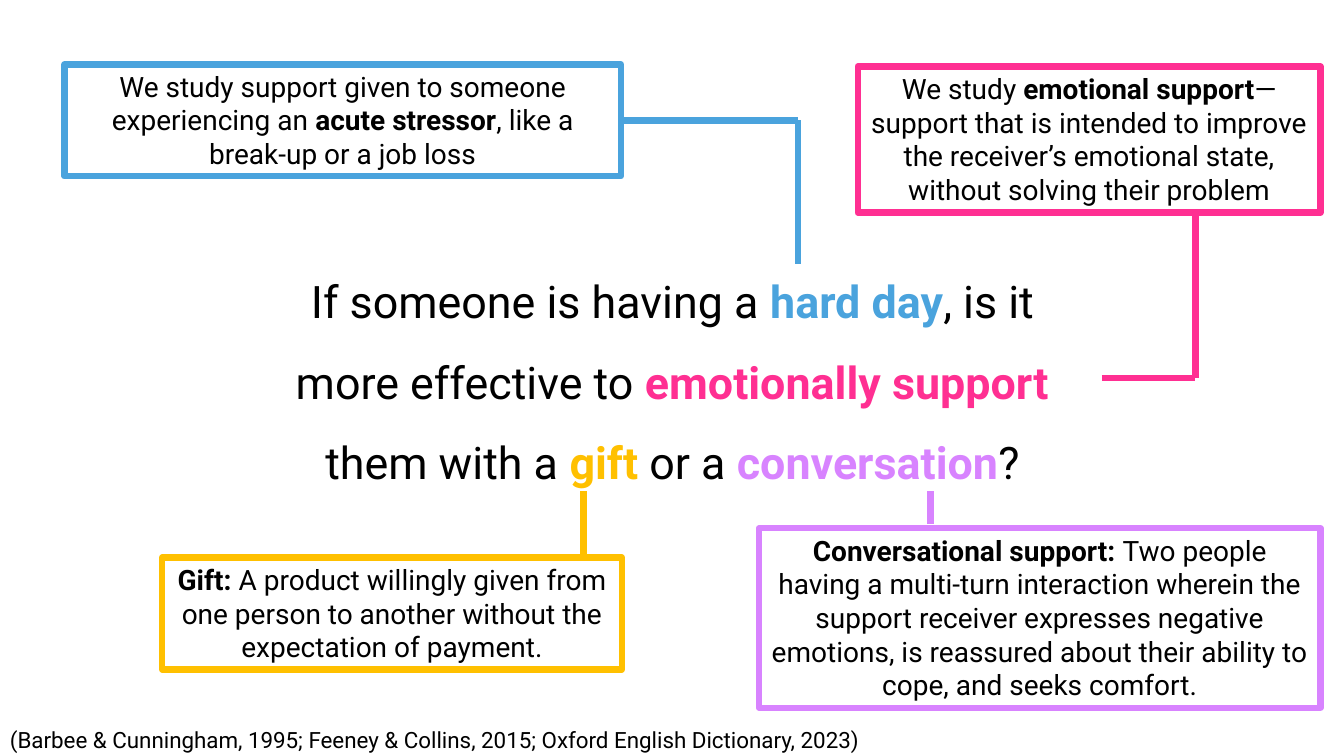
from dataclasses import dataclass

from lxml.etree import SubElement
from pptx import Presentation
from pptx.dml.color import RGBColor
from pptx.enum.shapes import MSO_CONNECTOR, MSO_SHAPE
from pptx.enum.text import MSO_ANCHOR, MSO_AUTO_SIZE, PP_ALIGN
from pptx.oxml.ns import qn
from pptx.util import Pt


@dataclass(frozen=True)
class Theme:
    font: str = "Roboto"
    black: RGBColor = RGBColor(0x00, 0x00, 0x00)
    blue: RGBColor = RGBColor(0x4A, 0xA3, 0xDD)
    pink: RGBColor = RGBColor(0xFF, 0x2F, 0x92)
    gold: RGBColor = RGBColor(0xFF, 0xC0, 0x00)
    purple: RGBColor = RGBColor(0xD8, 0x83, 0xFF)
    question_size: int = 32
    callout_size: int = 20
    citation_size: int = 16
    stroke: float = 4.5


THEME = Theme()


def write(tf, runs, size, align=PP_ALIGN.CENTER):
    """Fill a text frame from (text, accent) pairs; an accent colour makes a run bold."""
    tf.word_wrap = True
    p = tf.paragraphs[0]
    p.alignment = align
    p.font.name = THEME.font
    p.font.size = Pt(size)
    for text, accent in runs:
        r = p.add_run()
        r.text = text
        r.font.name = THEME.font
        r.font.size = Pt(size)
        r.font.bold = accent is not None
        r.font.color.rgb = accent or THEME.black
    return p


def add_text(slide, box, runs, size, align):
    tf = slide.shapes.add_textbox(*map(Pt, box)).text_frame
    return write(tf, runs, size, align)


def add_callout(slide, box, color, runs):
    sp = slide.shapes.add_shape(MSO_SHAPE.RECTANGLE, *map(Pt, box))
    sp.shadow.inherit = False
    sp.fill.background()
    sp.line.color.rgb = color
    sp.line.width = Pt(THEME.stroke)
    tf = sp.text_frame
    write(tf, runs, THEME.callout_size)
    tf.vertical_anchor = MSO_ANCHOR.TOP
    tf.auto_size = MSO_AUTO_SIZE.SHAPE_TO_FIT_TEXT
    return sp


def add_line(slide, start, end, color):
    line = slide.shapes.add_connector(MSO_CONNECTOR.STRAIGHT, *map(Pt, start + end))
    line.line.color.rgb = color
    line.line.width = Pt(THEME.stroke)
    SubElement(line._element.spPr, qn("a:effectLst"))
    return line


def main():
    prs = Presentation()
    prs.slide_width, prs.slide_height = Pt(960), Pt(540)
    slide = prs.slides.add_slide(prs.slide_layouts[6])
    t = THEME

    add_text(slide, (0, 514.8, 648.7, 26.6), [
        ("(Barbee & Cunningham, 1995; Feeney & Collins, 2015; "
         "Oxford English Dictionary, 2023)", None),
    ], t.citation_size, PP_ALIGN.LEFT)
    question = add_text(slide, (185.8, 172.8, 589, 193.7), [
        ("If someone is having a ", None), ("hard day", t.blue),
        (", is it more effective to ", None), ("emotionally support", t.pink),
        (" them with a ", None), ("gift", t.gold),
        (" or a ", None), ("conversation", t.purple), ("?", None),
    ], t.question_size, PP_ALIGN.CENTER)
    question.line_spacing = 1.5

    stressor = add_callout(slide, (46, 46, 397.5, 80), t.blue, [
        ("We study support given to someone experiencing an ", None),
        ("acute stressor", t.black),
        (", like a break-up or a job loss", None),
    ])
    add_callout(slide, (612.7, 47.5, 330.5, 104.4), t.pink, [
        ("We study ", None), ("emotional support", t.black),
        ("—support that is intended to improve the receiver’s emotional state, "
         "without solving their problem", None),
    ])
    add_callout(slide, (115.9, 398.2, 328.3, 80), t.gold, [
        ("Gift: ", t.black),
        ("A product willingly given from one person to another "
         "without the expectation of payment.", None),
    ])
    add_callout(slide, (542.2, 377.3, 401, 128.2), t.purple, [
        ("Conversational support: ", t.black),
        ("Two people having a multi-turn interaction wherein the support receiver "
         "expresses negative emotions, is reassured about their ability to cope, "
         "and seeks comfort.", None),
    ])

    stressor_corner, support_corner = (570.2, 86), (853.9, 270)
    from_stressor = add_line(slide, (443.5, 86), stressor_corner, t.blue)
    from_stressor.begin_connect(stressor, 3)
    add_line(slide, stressor_corner, (570.2, 188.6), t.blue)
    add_line(slide, (853.9, 151.9), support_corner, t.pink)
    add_line(slide, (787, 270), support_corner, t.pink)
    add_line(slide, (416.9, 398.2), (416.9, 350.6), t.gold)
    add_line(slide, (664.6, 374.4), (664.6, 350.6), t.purple)

    prs.save("out.pptx")


if __name__ == "__main__":
    main()
